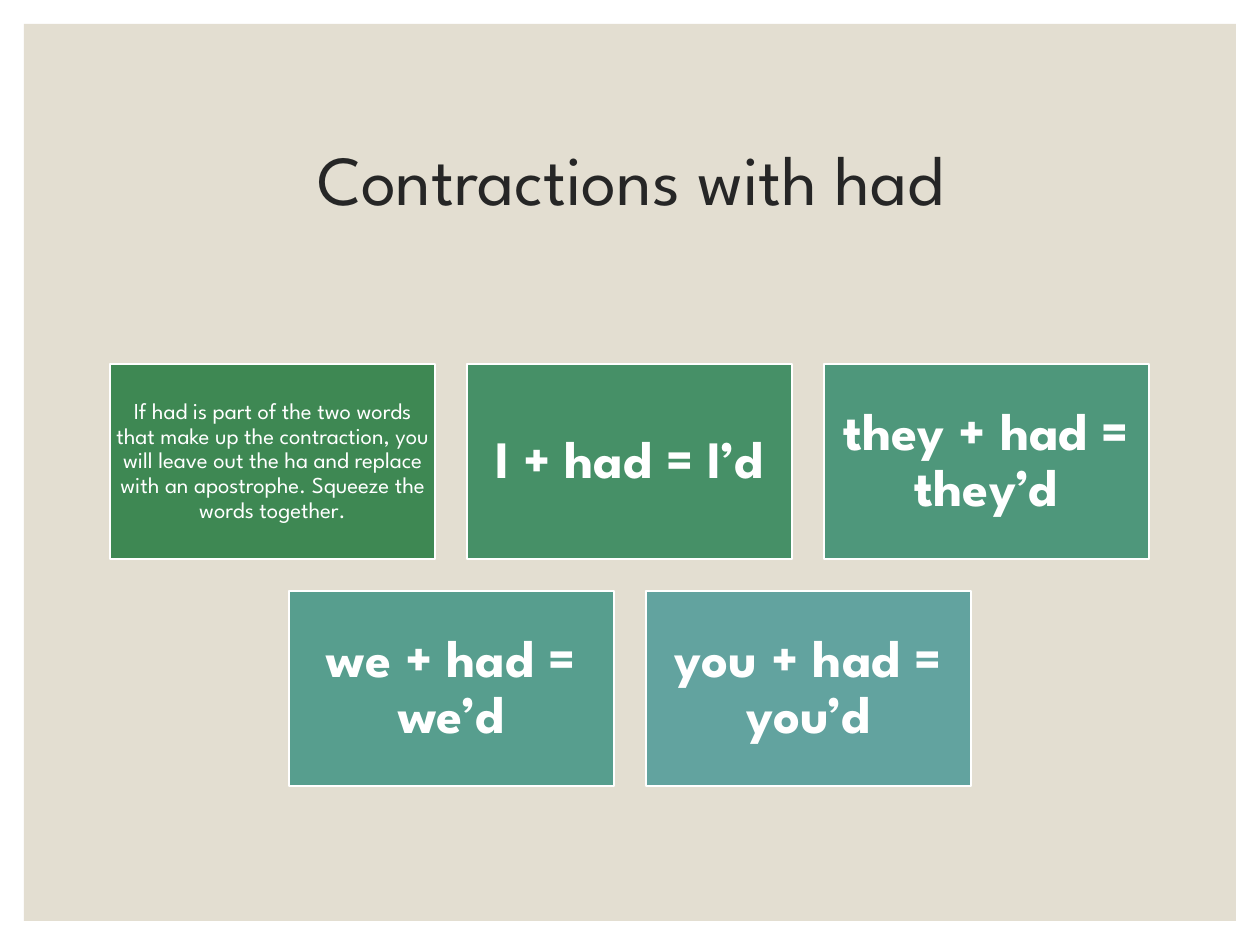
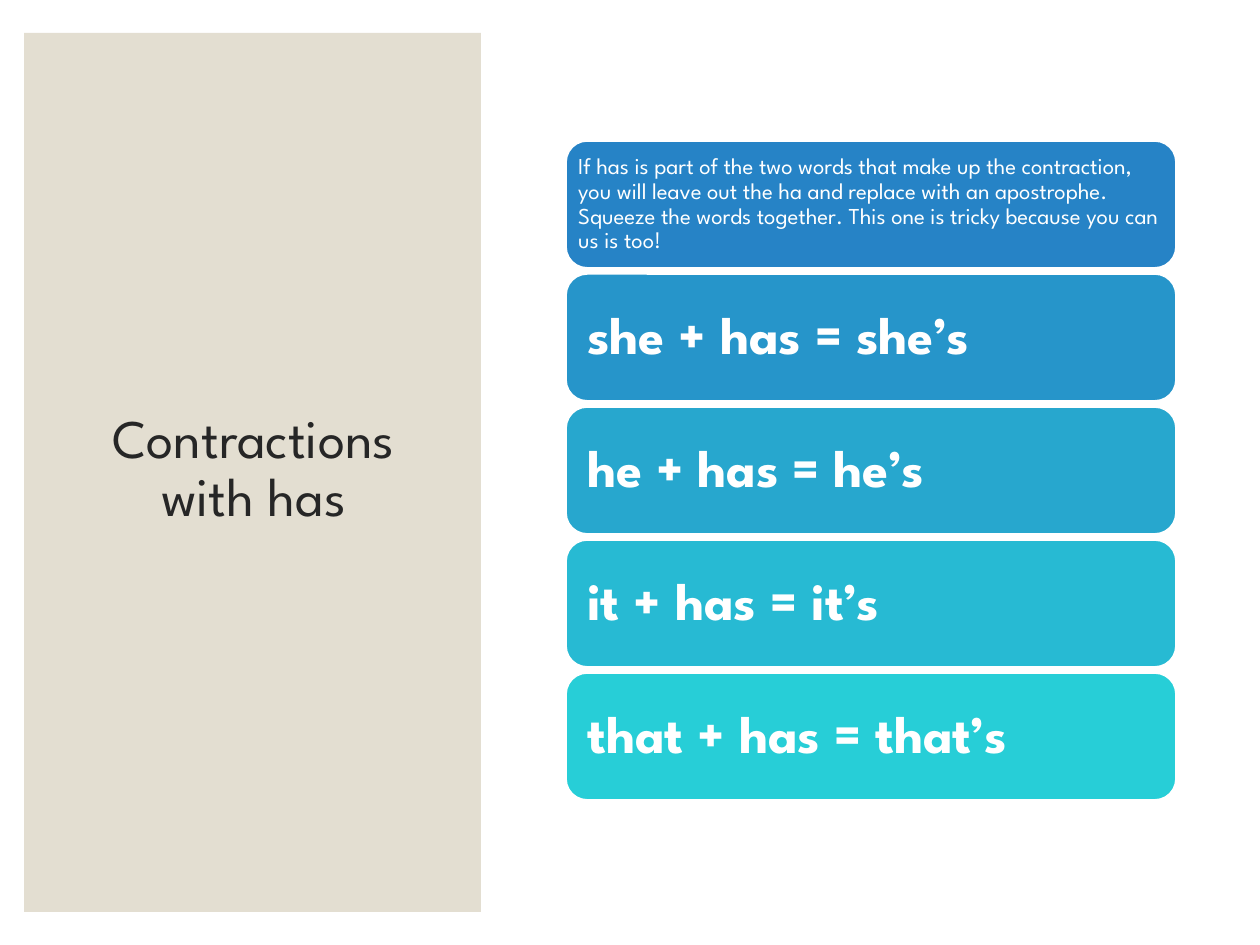
from pptx import Presentation
from pptx.dml.color import RGBColor
from pptx.enum.shapes import MSO_SHAPE
from pptx.enum.text import MSO_ANCHOR, PP_ALIGN
from pptx.util import Emu, Pt

PX = 914400 / 126
FONT = "League Spartan"
WHITE = RGBColor(0xFF, 0xFF, 0xFF)
SAND = RGBColor(0xE3, 0xDE, 0xD1)
INK = RGBColor(0x26, 0x26, 0x26)
GREENS = [
    RGBColor(0x3E, 0x88, 0x53),
    RGBColor(0x46, 0x90, 0x67),
    RGBColor(0x4E, 0x97, 0x7B),
    RGBColor(0x57, 0x9E, 0x8E),
    RGBColor(0x62, 0xA3, 0x9F),
]
BLUES = [
    RGBColor(0x26, 0x83, 0xC6),
    RGBColor(0x26, 0x95, 0xCA),
    RGBColor(0x27, 0xA7, 0xCE),
    RGBColor(0x27, 0xBA, 0xD3),
    RGBColor(0x27, 0xCE, 0xD7),
]
RECT = MSO_SHAPE.RECTANGLE
ROUNDED = MSO_SHAPE.ROUNDED_RECTANGLE
MIDDLE = MSO_ANCHOR.MIDDLE
CENTER = PP_ALIGN.CENTER
LEFT = PP_ALIGN.LEFT
RULE_STYLE = {"size": 13, "inset": 6}
SUM_STYLE = {"size": 30, "inset": 15, "bold": True}


def add_panel(slide, outline, box, fill, border=None):
    panel = slide.shapes.add_shape(outline, *[Emu(round(n * PX)) for n in box])
    panel.shadow.inherit = False
    panel.fill.solid()
    panel.fill.fore_color.rgb = fill
    if border:
        panel.line.color.rgb = WHITE
        panel.line.width = Pt(border)
    else:
        panel.line.fill.background()
    return panel


def write(holder, text, size, color=WHITE, align=CENTER, inset=6, bold=False):
    frame = holder.text_frame
    frame.word_wrap = True
    frame.vertical_anchor = MIDDLE
    margin = Emu(round(inset * PX))
    frame.margin_left = frame.margin_right = margin
    frame.margin_top = frame.margin_bottom = margin
    paragraph = frame.paragraphs[0]
    paragraph.alignment = align
    paragraph.line_spacing = 0.9
    run = paragraph.add_run()
    run.text = text
    run.font.name = FONT
    run.font.size = Pt(size)
    run.font.bold = bold
    run.font.color.rgb = color


deck = Presentation()
deck.slide_width = Emu(round(1260 * PX))
deck.slide_height = Emu(round(945 * PX))
blank = deck.slide_layouts[6]

pages = [
    ("Contractions with had", 40, (24, 24, 1212, 897), (111, 88, 1039, 189)),
    ("Contractions with has", 31, (24, 33, 457, 879), (59, 77, 389, 786)),
]
slides = []
for title, title_size, band, title_box in pages:
    slide = deck.slides.add_slide(blank)
    add_panel(slide, RECT, band, SAND)
    heading = slide.shapes.add_textbox(*[Emu(round(n * PX)) for n in title_box])
    write(heading, title, title_size, color=INK, inset=12)
    slides.append(slide)
had_slide, has_slide = slides

had_rule = (
    "If had is part of the two words that make up the contraction, you will leave out "
    "the ha and replace with an apostrophe. Squeeze the words together."
)
had_rows = [
    [had_rule, "I + had = I’d", "they + had = they’d"],
    ["we + had = we’d", "you + had = you’d"],
]
card_width, card_height, card_gap = 325, 195, 32
greens = iter(GREENS)
for row, texts in enumerate(had_rows):
    row_width = len(texts) * (card_width + card_gap) - card_gap
    row_left = (1260 - row_width) // 2
    top = 364 + row * (card_height + card_gap)
    for column, text in enumerate(texts):
        left = row_left + column * (card_width + card_gap)
        card = add_panel(
            had_slide, RECT, (left, top, card_width, card_height), next(greens), border=1.5
        )
        write(card, text, **(RULE_STYLE if text == had_rule else SUM_STYLE))

has_rule = (
    "If has is part of the two words that make up the contraction, you will leave out "
    "the ha and replace with an apostrophe. Squeeze the words together. "
    "This one is tricky because you can us is too!"
)
has_texts = [
    has_rule,
    "she + has = she’s",
    "he + has = he’s",
    "it + has = it’s",
    "that + has = that’s",
]
for index, (text, blue) in enumerate(zip(has_texts, BLUES)):
    bar = add_panel(has_slide, ROUNDED, (566, 141 + index * 133, 610, 127), blue, border=1)
    write(bar, text, align=LEFT, **(RULE_STYLE if text == has_rule else SUM_STYLE))

deck.save("out.pptx")
